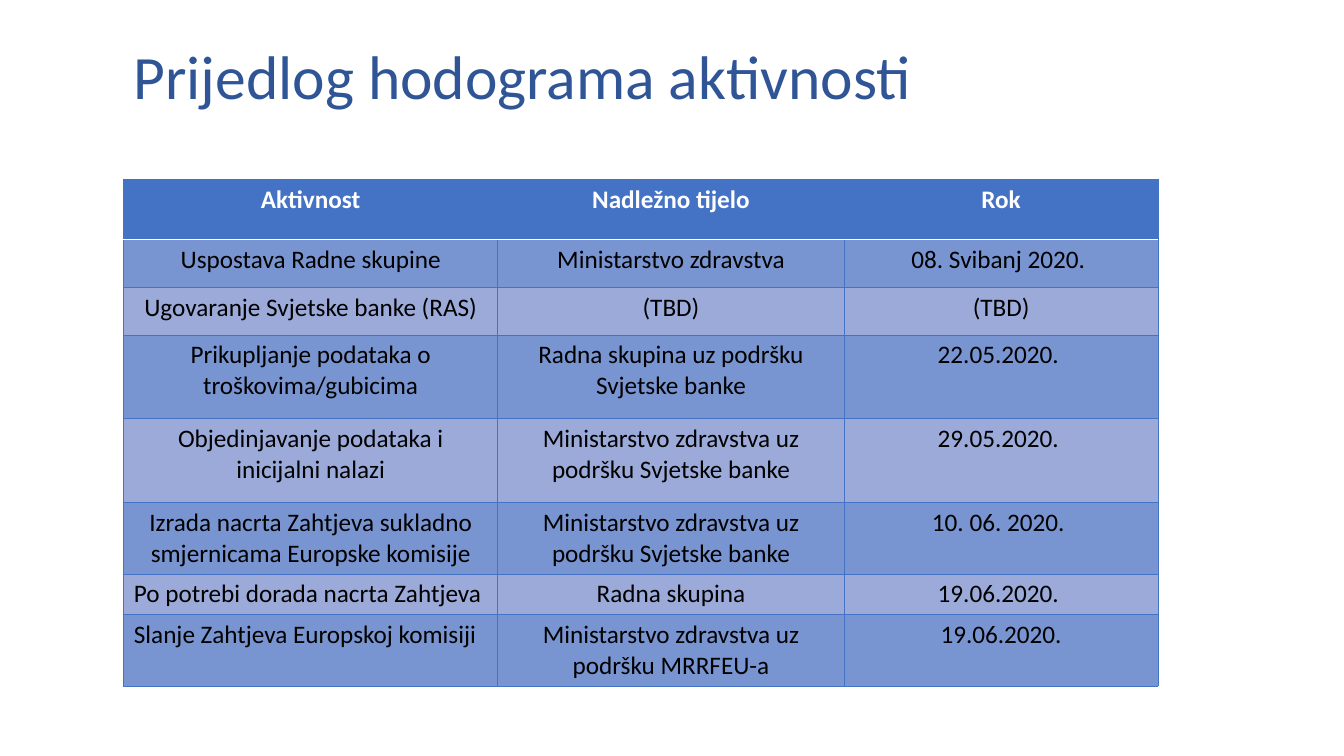
from dataclasses import dataclass

from lxml import etree
from pptx import Presentation
from pptx.dml.color import RGBColor
from pptx.enum.text import MSO_ANCHOR, PP_ALIGN
from pptx.oxml.ns import qn
from pptx.slide import Slide
from pptx.table import _Cell
from pptx.util import Cm, Pt

MIDDLE = MSO_ANCHOR.MIDDLE
LEFT = PP_ALIGN.LEFT
CENTER = PP_ALIGN.CENTER


@dataclass(frozen=True)
class Theme:
    font: str = "Calibri"
    title_size: int = 44
    table_size: int = 18
    title_color: str = "2F5597"
    accent: str = "4472C4"
    dark_band: str = "7995D1"
    light_band: str = "9BAAD9"
    white: str = "FFFFFF"
    black: str = "000000"


@dataclass(frozen=True)
class Activity:
    name: str
    body: str
    deadline: str
    height: float
    name_alignment: PP_ALIGN = CENTER


THEME = Theme()
TITLE = "Prijedlog hodograma aktivnosti"
TABLE_LEFT, TABLE_TOP = 3.12, 4.52
COLUMN_WIDTHS = (9.42, 8.74, 7.9)
ACTIVITIES = (
    Activity("Aktivnost", "Nadležno tijelo", "Rok", 1.52),
    Activity("Uspostava Radne skupine", "Ministarstvo zdravstva", "08. Svibanj 2020. ", 1.2),
    Activity("Ugovaranje Svjetske banke (RAS)", "(TBD)", "(TBD)", 1.2),
    Activity("Prikupljanje podataka o troškovima/gubicima",
             "Radna skupina uz podršku Svjetske banke", "22.05.2020. ", 2.11),
    Activity("Objedinjavanje podataka i inicijalni nalazi",
             "Ministarstvo zdravstva uz podršku Svjetske banke", "29.05.2020. ", 2.11),
    Activity("Izrada nacrta Zahtjeva sukladno smjernicama Europske komisije",
             "Ministarstvo zdravstva uz podršku Svjetske banke", "10. 06. 2020. ", 1.8),
    Activity("Po potrebi dorada nacrta Zahtjeva", "Radna skupina", "19.06.2020. ", 1.03, LEFT),
    Activity("Slanje Zahtjeva Europskoj komisiji",
             "Ministarstvo zdravstva uz podršku MRRFEU-a", "19.06.2020.", 1.8, LEFT),
)


def add_title(slide: Slide) -> None:
    """Add the slide title."""
    frame = slide.shapes.add_textbox(Cm(3.12), Cm(0.58), Cm(26.39), Cm(2.87)).text_frame
    frame.word_wrap = True
    frame.vertical_anchor = MIDDLE
    paragraph = frame.paragraphs[0]
    paragraph.text = TITLE
    paragraph.line_spacing = 0.9
    paragraph.font.name = THEME.font
    paragraph.font.size = Pt(THEME.title_size)
    paragraph.font.color.rgb = RGBColor.from_string(THEME.title_color)


def set_border(cell: _Cell, side: str, color: str, width: float) -> None:
    """Append a solid border to one side of a cell."""
    properties = cell._tc.get_or_add_tcPr()
    line = etree.SubElement(properties, qn(f"a:ln{side}"), w=str(Pt(width)))
    fill = etree.SubElement(line, qn("a:solidFill"))
    etree.SubElement(fill, qn("a:srgbClr"), val=color)


def format_cell(cell: _Cell, text: str, row: int, alignment: PP_ALIGN) -> None:
    """Write a cell and style it by its row number."""
    is_header = row == 0
    white_sides = {0: "B", 1: "T"}
    for side in "LRTB":
        if white_sides.get(row) == side:
            set_border(cell, side, THEME.white, 1)
        else:
            set_border(cell, side, THEME.accent, 0.5)
    band = THEME.dark_band if row % 2 else THEME.light_band
    cell.fill.solid()
    cell.fill.fore_color.rgb = RGBColor.from_string(THEME.accent if is_header else band)
    paragraph = cell.text_frame.paragraphs[0]
    paragraph.text = text
    paragraph.alignment = alignment
    paragraph.font.name = THEME.font
    paragraph.font.size = Pt(THEME.table_size)
    paragraph.font.bold = is_header
    paragraph.font.color.rgb = RGBColor.from_string(THEME.white if is_header else THEME.black)


def add_schedule(slide: Slide) -> None:
    """Add the table of activities."""
    height = sum(activity.height for activity in ACTIVITIES)
    table = slide.shapes.add_table(
        len(ACTIVITIES), len(COLUMN_WIDTHS), Cm(TABLE_LEFT), Cm(TABLE_TOP),
        Cm(sum(COLUMN_WIDTHS)), Cm(height)).table
    for column, width in zip(table.columns, COLUMN_WIDTHS):
        column.width = Cm(width)
    for row, activity in enumerate(ACTIVITIES):
        table.rows[row].height = Cm(activity.height)
        format_cell(table.cell(row, 0), activity.name, row, activity.name_alignment)
        format_cell(table.cell(row, 1), activity.body, row, CENTER)
        format_cell(table.cell(row, 2), activity.deadline, row, CENTER)


def main() -> None:
    """Build and save the presentation."""
    presentation = Presentation()
    presentation.slide_width = Cm(33.87)
    presentation.slide_height = Cm(19.05)
    slide = presentation.slides.add_slide(presentation.slide_layouts[6])
    add_title(slide)
    add_schedule(slide)
    presentation.save("out.pptx")


if __name__ == "__main__":
    main()
